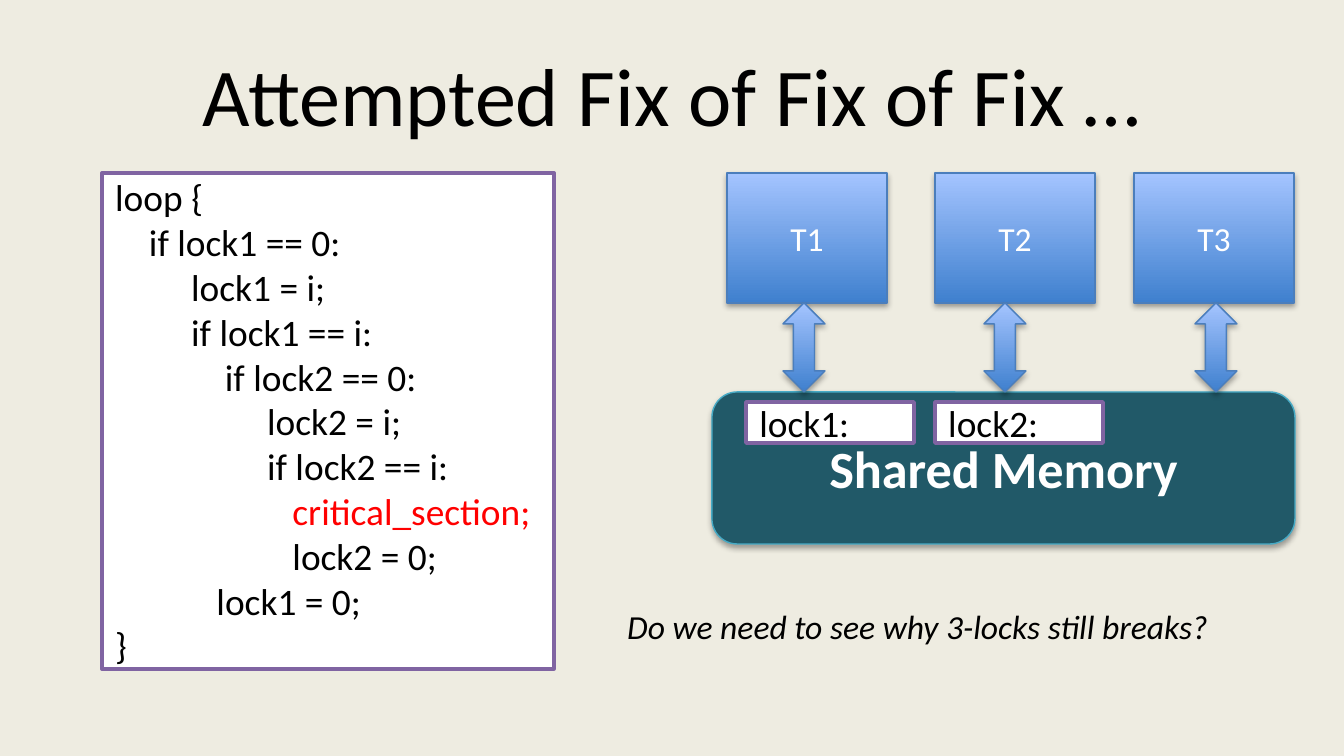
from lxml.etree import SubElement
from pptx import Presentation
from pptx.dml.color import RGBColor
from pptx.enum.shapes import MSO_SHAPE as Shape
from pptx.enum.text import MSO_ANCHOR as Anchor, PP_ALIGN as Align
from pptx.oxml.ns import qn
from pptx.util import Emu, Pt

# Content
TITLE = "Attempted Fix of Fix of Fix …"
CODE = [  # (indent in spaces, statement)
    (0, "loop {"),
    (4, "if lock1 == 0:"),
    (9, "lock1 = i;"),
    (9, "if lock1 == i:"),
    (13, "if lock2 == 0:"),
    (18, "lock2 = i;"),
    (18, "if lock2 == i:"),
    (21, "critical_section;"),
    (21, "lock2 = 0;"),
    (12, "lock1 = 0;"),
    (0, "}"),
]
CRITICAL = "critical_section;"
THREADS = [("T1", 727, 783), ("T2", 935, 984), ("T3", 1134, 1195)]  # box left, arrow left
MEMORY = "Shared Memory"
LOCKS = [("lock1:", 746), ("lock2:", 935)]
QUESTION = "Do we need to see why 3-locks still breaks?"


class Theme:
    font = "Calibri"
    background, ink, paper = "EEECE1", "000000", "FFFFFF"
    critical, frame = "FF0000", "8064A2"
    thread = ("3F80CE", "A4C4FF")  # bottom, top
    thread_edge = "4B7EBC"
    memory, memory_edge = "215968", "46AAC5"
    title_size, memory_size, code_size, label_size = 44, 28, 20, 18
    frame_width, edge_width = 2, 0.75


# Layout in px
WIDTH, HEIGHT = 1344, 756
TOP = 173
THREAD_W, THREAD_H = 160, 130
ARROW_W, ARROW_H = 42, 89
SPACE_PX = 8.44  # one space of code type


def px(n):
    return Emu(round(n * 9144000 / WIDTH))


def rgb(code):
    return RGBColor.from_string(code)


def write(paragraph, text, size, color, align=Align.LEFT, bold=False, italic=False):
    paragraph.alignment = align
    run = paragraph.add_run()
    run.text = text
    font = run.font
    font.name, font.size, font.color.rgb = Theme.font, Pt(size), rgb(color)
    font.bold, font.italic = bold, italic


def add_box(kind, left, top, width, height, fill, edge, edge_width):
    """Solid fill for one colour, vertical gradient for a pair."""
    box = slide.shapes.add_shape(kind, px(left), px(top), px(width), px(height))
    box.shadow.inherit = False
    if isinstance(fill, tuple):
        box.fill.gradient()
        box.fill.gradient_angle = 90
        for stop, position, color in zip(box.fill.gradient_stops, (0, 1), fill):
            stop.position, stop.color.rgb = position, rgb(color)
    else:
        box.fill.solid()
        box.fill.fore_color.rgb = rgb(fill)
    box.line.color.rgb, box.line.width = rgb(edge), Pt(edge_width)
    box.text_frame.vertical_anchor = Anchor.MIDDLE
    return box


def add_raised(*args):
    box = add_box(*args, Theme.edge_width)
    effects = box._element.spPr.find(qn("a:effectLst"))
    shadow = SubElement(effects, qn("a:outerShdw"), blurRad="40000", dist="23000",
                        dir="5400000", rotWithShape="0")
    color = SubElement(shadow, qn("a:srgbClr"), val=Theme.ink)
    SubElement(color, qn("a:alpha"), val="35000")
    return box


def add_framed(left, top, width, height):
    return add_box(Shape.RECTANGLE, left, top, width, height,
                   Theme.paper, Theme.frame, Theme.frame_width)


prs = Presentation()
prs.slide_width, prs.slide_height = px(WIDTH), px(HEIGHT)
slide = prs.slides.add_slide(prs.slide_layouts[5])
slide.background.fill.solid()
slide.background.fill.fore_color.rgb = rgb(Theme.background)

# Title
title = slide.shapes.title
title.left, title.top, title.width, title.height = px(67), px(31), px(1210), px(126)
title.text_frame.vertical_anchor = Anchor.MIDDLE
write(title.text_frame.paragraphs[0], TITLE, Theme.title_size, Theme.ink, Align.CENTER)

# Code listing
listing = add_framed(102, TOP, 452, 496).text_frame
for row, (indent, statement) in enumerate(CODE):
    line = listing.add_paragraph() if row else listing.paragraphs[0]
    line._p.get_or_add_pPr().set("marL", str(px(indent * SPACE_PX)))
    write(line, statement, Theme.code_size,
          Theme.critical if statement == CRITICAL else Theme.ink)

# Shared memory
memory_top = TOP + THREAD_H + ARROW_H
memory = add_raised(Shape.ROUNDED_RECTANGLE, 712, memory_top, 583, 152,
                    Theme.memory, Theme.memory_edge)
write(memory.text_frame.paragraphs[0], MEMORY, Theme.memory_size, Theme.paper,
      Align.CENTER, bold=True)

# Threads and their arrows to memory
for name, left, arrow_left in THREADS:
    thread = add_raised(Shape.RECTANGLE, left, TOP, THREAD_W, THREAD_H,
                        Theme.thread, Theme.thread_edge)
    write(thread.text_frame.paragraphs[0], name, Theme.label_size, Theme.paper, Align.CENTER)
    add_raised(Shape.UP_DOWN_ARROW, arrow_left, TOP + THREAD_H, ARROW_W, ARROW_H,
               Theme.thread, Theme.thread_edge)

# Lock variables
for name, left in LOCKS:
    lock = add_framed(left, memory_top + 10, 168, 41)
    write(lock.text_frame.paragraphs[0], name, Theme.code_size, Theme.ink)

# Closing question
question = slide.shapes.add_textbox(px(614), px(599), px(625), px(54)).text_frame
question.word_wrap = False
write(question.paragraphs[0], QUESTION, Theme.label_size, Theme.ink, italic=True)

prs.save("out.pptx")
